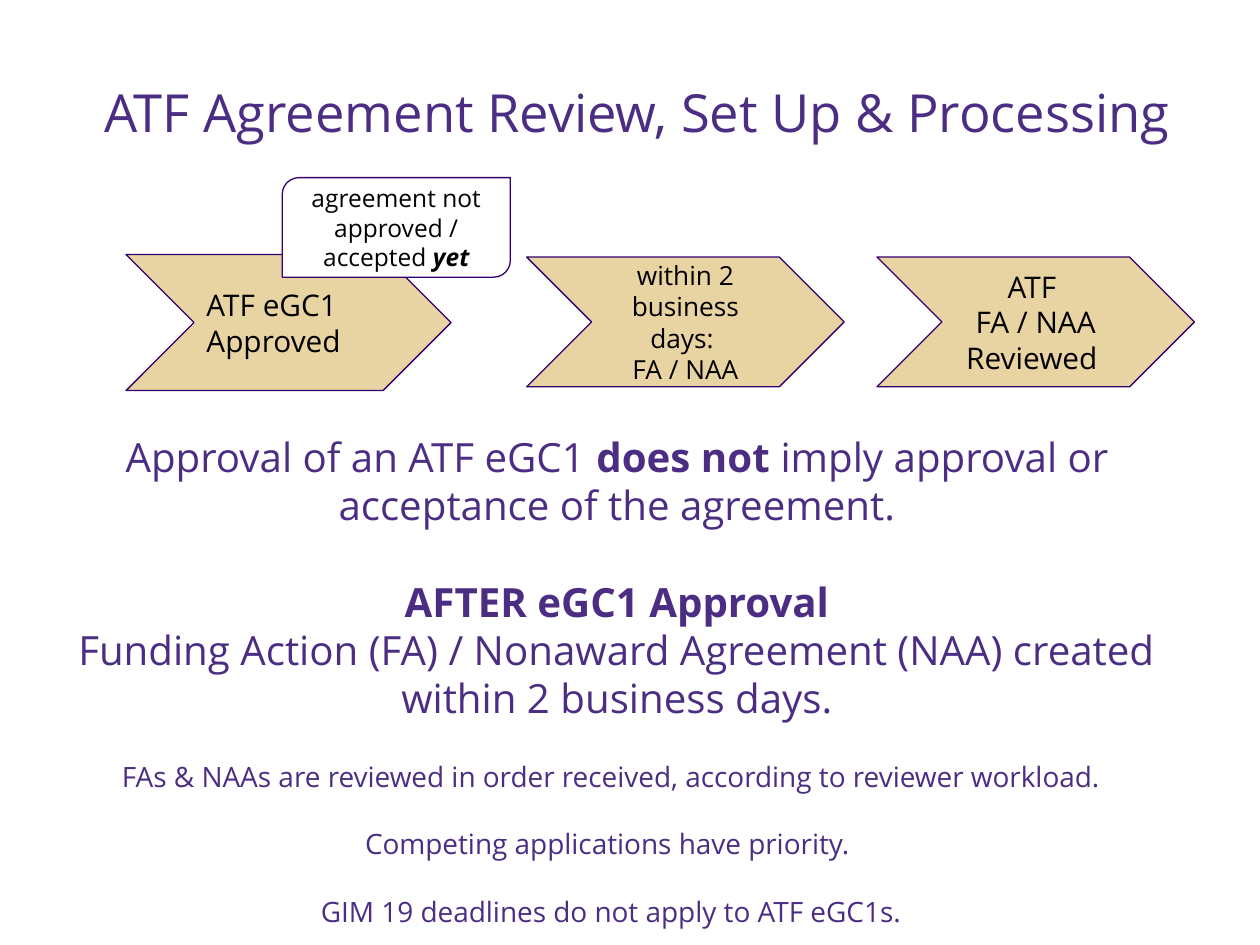
"""Build the ATF agreement review, set up and processing slide."""
from pptx import Presentation
from pptx.dml.color import RGBColor
from pptx.enum.shapes import MSO_SHAPE
from pptx.enum.text import MSO_ANCHOR, PP_ALIGN
from pptx.util import Inches, Pt

FONT = "Open Sans"
COLORS = {"purple": "4B2E83", "outline": "33006F", "gold": "E8D3A2",
          "white": "FFFFFF", "black": "000000"}
BLANK_LINE = 1.2


def color(name):
    return RGBColor.from_string(COLORS[name])


def add_run(paragraph, text, size, ink, style=""):
    run = paragraph.add_run()
    run.text = text
    run.font.name = FONT
    run.font.size = Pt(size)
    run.font.color.rgb = color(ink)
    run.font.bold = "b" in style
    run.font.italic = "i" in style


def write_text(shape, paragraphs, size, ink, anchor,
               align=PP_ALIGN.CENTER, gaps=(), bottom=0.1):
    frame = shape.text_frame
    frame.word_wrap = True
    frame.vertical_anchor = anchor
    frame.margin_left = frame.margin_right = frame.margin_top = Inches(0.1)
    frame.margin_bottom = Inches(bottom)
    for index, runs in enumerate(paragraphs):
        paragraph = frame.add_paragraph() if index else frame.paragraphs[0]
        paragraph.alignment = align
        if index in gaps:
            paragraph.space_before = Pt(round(size * BLANK_LINE, 1))
        for text, *style in runs:
            add_run(paragraph, text, size, ink, *style)
    return frame


def add_text(slide, box, paragraphs, size, anchor=MSO_ANCHOR.TOP, **options):
    shape = slide.shapes.add_textbox(*map(Inches, box))
    return write_text(shape, paragraphs, size, "purple", anchor, **options)


def add_box(slide, kind, box, fill, adjustment, paragraphs, size, **options):
    shape = slide.shapes.add_shape(kind, *map(Inches, box))
    shape.shadow.inherit = False
    shape.adjustments[0] = adjustment
    shape.fill.solid()
    shape.fill.fore_color.rgb = color(fill)
    shape.line.color.rgb = color("outline")
    shape.line.width = Pt(0.75)
    write_text(shape, paragraphs, size, "black", MSO_ANCHOR.MIDDLE, **options)


def add_step(slide, box, paragraphs, size, **options):
    add_box(slide, MSO_SHAPE.CHEVRON, box, "gold", 0.5, paragraphs, size, **options)


def main():
    presentation = Presentation()
    presentation.slide_width, presentation.slide_height = Inches(10), Inches(7.5)
    slide = presentation.slides.add_slide(presentation.slide_layouts[6])

    title = add_text(slide, (0.73, 0.16, 8.95, 1.08),
                     [[("ATF Agreement Review, Set Up & Processing",)]], 30,
                     MSO_ANCHOR.BOTTOM, align=PP_ALIGN.LEFT)
    title.paragraphs[0].line_spacing = 0.9

    add_text(slide, (0.2, 5.93, 9.3, 1.79), [
        [("FAs & NAAs are reviewed in order received, according to reviewer workload.",)],
        [("Competing applications have priority. ",)],
        [("GIM 19 deadlines do not apply to ATF eGC1s.",)],
    ], 16, gaps=(1, 2))

    add_step(slide, (1, 2.02, 2.58, 1.08), [[("ATF eGC1 Approved",)]], 17,
             align=PP_ALIGN.LEFT)
    add_step(slide, (4.18, 2.04, 2.52, 1.03),
             [[("within 2 business days: ",)], [("FA / NAA",)]], 15)
    add_step(slide, (6.96, 2.04, 2.52, 1.03),
             [[("ATF ",)], [("FA / NAA Reviewed ",)]], 17)

    add_text(slide, (0.33, 3.78, 9.14, 2.03), [
        [("Approval of an ATF eGC1 ",), ("does not", "b"),
         (" imply approval or acceptance of the agreement.",)],
        [("AFTER eGC1 Approval", "b")],
        [("Funding Action (FA) / Nonaward Agreement (NAA) created "
          "within 2 business days.",)],
    ], 23, MSO_ANCHOR.MIDDLE, gaps=(1,), bottom=0.53)

    add_box(slide, MSO_SHAPE.ROUND_2_DIAG_RECTANGLE, (2.24, 1.41, 1.81, 0.79),
            "white", 0.167,
            [[("agreement not approved /",)], [("accepted ",), ("yet", "bi")]], 14)

    presentation.save("out.pptx")


if __name__ == "__main__":
    main()
